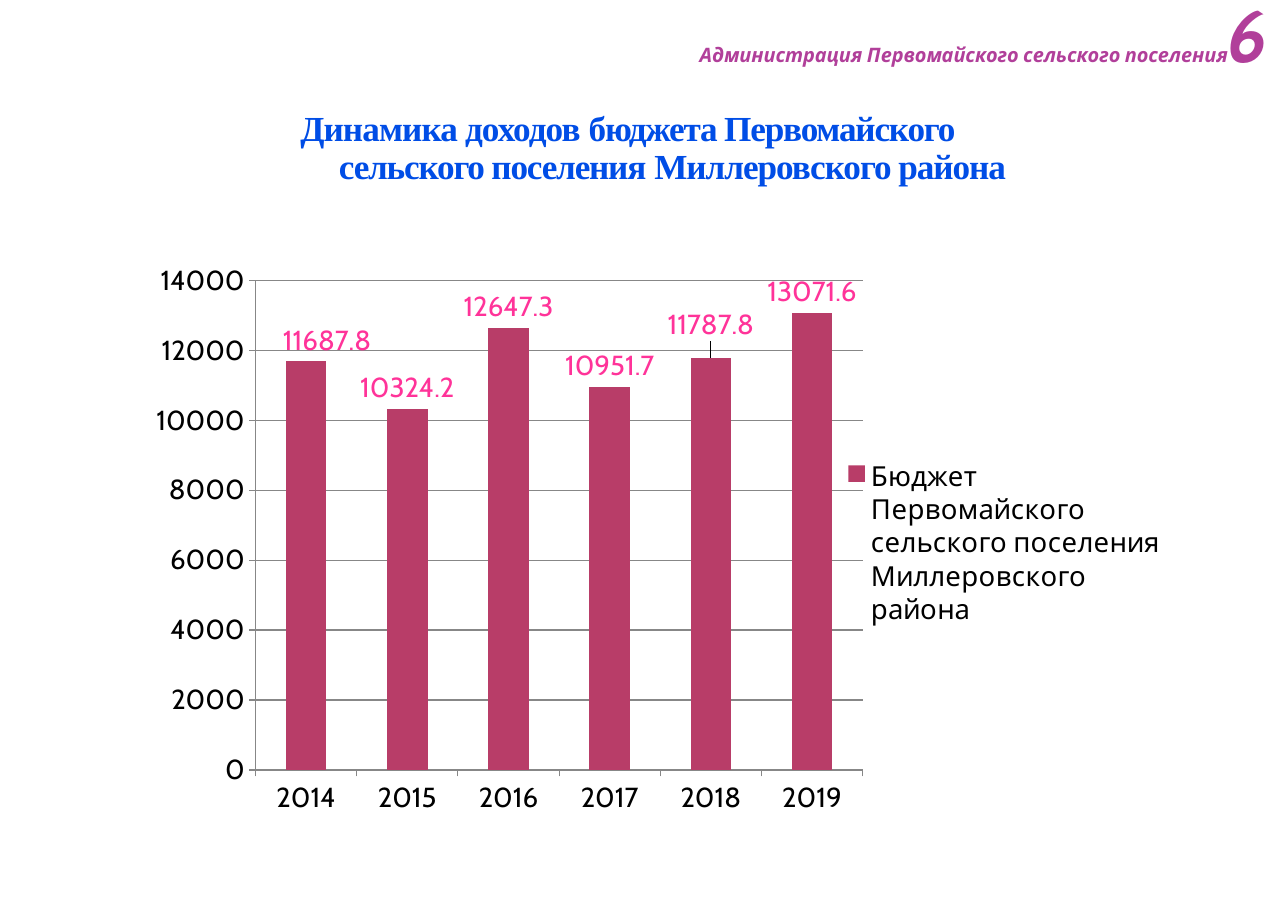
from dataclasses import dataclass

from lxml.etree import SubElement
from pptx import Presentation
from pptx.chart.data import CategoryChartData
from pptx.dml.color import RGBColor
from pptx.enum.chart import XL_CHART_TYPE, XL_LABEL_POSITION, XL_LEGEND_POSITION, XL_TICK_MARK
from pptx.enum.text import MSO_ANCHOR, MSO_AUTO_SIZE, PP_ALIGN
from pptx.oxml.ns import qn
from pptx.util import Inches, Pt


@dataclass(frozen=True)
class Theme:
    title: RGBColor = RGBColor(0x00, 0x4D, 0xE6)
    header: RGBColor = RGBColor(0xB1, 0x3F, 0x9A)
    bar: RGBColor = RGBColor(0xB8, 0x3D, 0x68)
    value: RGBColor = RGBColor(0xFF, 0x33, 0x99)
    text: RGBColor = RGBColor(0x00, 0x00, 0x00)
    rule: RGBColor = RGBColor(0x87, 0x87, 0x87)
    title_font: str = "Times New Roman"
    body_font: str = "Cabin"
    title_size: int = 23
    header_size: int = 13
    number_size: int = 48
    chart_size: int = 18


THEME = Theme()
WIDTH, HEIGHT = Inches(11.69), Inches(8.26)

# Left, top, width and height in percent of the slide
TITLE_AREA = (17.96, 12.11, 61.42, 8.47)
CHART_AREA = (10.09, 26.88, 81.27, 65.62)
HEADER_AREA = (50.73, 1.57, 47.73, 6.9)

BUDGET = {"2014": 11687.8, "2015": 10324.2, "2016": 12647.3,
          "2017": 10951.7, "2018": 11787.8, "2019": 13071.6}
SERIES_NAME = "Бюджет Первомайского сельского поселения Миллеровского района"
# Shifts of single value labels, in shares of the chart
LABEL_SHIFTS = {0: (0.02, 0), 4: (0, -0.02)}


def area(shares):
    """Turn percentages into left, top, width and height."""
    return [int(side * share / 100)
            for side, share in zip((WIDTH, HEIGHT, WIDTH, HEIGHT), shares)]


def place(shape, shares):
    shape.left, shape.top, shape.width, shape.height = area(shares)


def prepare_frame(frame, anchor, auto_size):
    frame.word_wrap = True
    frame.auto_size = auto_size
    frame.vertical_anchor = anchor
    frame.margin_left = frame.margin_top = frame.margin_right = frame.margin_bottom = 0


def add_span(para, text, font, size, color, italic=False, spacing=None):
    span = para.add_run()
    span.text = text
    span.font.name, span.font.size = font, Pt(size)
    span.font.bold, span.font.italic = True, italic
    span.font.color.rgb = color
    if spacing is not None:
        span._r.get_or_add_rPr().set("spc", str(round(spacing * 100)))


def add_title(page):
    box = page.shapes.title
    place(box, TITLE_AREA)
    prepare_frame(box.text_frame, MSO_ANCHOR.TOP, MSO_AUTO_SIZE.SHAPE_TO_FIT_TEXT)
    para = box.text_frame.paragraphs[0]
    para.alignment = PP_ALIGN.CENTER
    para.line_spacing = Pt(25)
    properties = para._p.get_or_add_pPr()
    properties.set("marL", str(Inches(0.83)))
    properties.set("indent", str(Inches(-0.82)))
    for text, spacing in (("Динамика доходов ", -0.6),
                          ("бюджета Первомайского сельского поселения ", -0.8),
                          ("Миллеровского района", -0.7)):
        add_span(para, text, THEME.title_font, THEME.title_size, THEME.title, spacing=spacing)


def add_header(page):
    box = page.shapes.add_textbox(*area(HEADER_AREA))
    prepare_frame(box.text_frame, MSO_ANCHOR.BOTTOM, MSO_AUTO_SIZE.NONE)
    para = box.text_frame.paragraphs[0]
    para.alignment = PP_ALIGN.RIGHT
    for text, size in (("Администрация Первомайского сельского поселения", THEME.header_size),
                       ("6", THEME.number_size)):
        add_span(para, text, THEME.body_font, size, THEME.header, italic=True)


def set_layout(parent, position, **values):
    """Give a chart part a manual layout, as child number `position`."""
    for layout in parent.findall(qn("c:layout")):
        parent.remove(layout)
    layout = SubElement(parent, qn("c:layout"))
    parent.insert(position, layout)
    manual = SubElement(layout, qn("c:manualLayout"))
    for name, value in values.items():
        SubElement(manual, qn(f"c:{name}")).set("val", str(value))


def style_font(font, color):
    font.name, font.size = THEME.body_font, Pt(THEME.chart_size)
    font.bold = False
    font.color.rgb = color


def style_line(line):
    line.color.rgb = THEME.rule
    line.width = Pt(0.75)


def style_axes(chart):
    for axis in (chart.category_axis, chart.value_axis):
        axis.major_tick_mark = XL_TICK_MARK.OUTSIDE
        axis.minor_tick_mark = XL_TICK_MARK.NONE
        style_line(axis.format.line)
    values = chart.value_axis
    values.minimum_scale, values.maximum_scale, values.major_unit = 0, 14000, 2000
    values.has_major_gridlines = True
    style_line(values.major_gridlines.format.line)


def style_labels(series):
    labels = series.data_labels
    labels.show_value = True
    labels.position = XL_LABEL_POSITION.OUTSIDE_END
    style_font(labels.font, THEME.value)
    for index, (right, down) in LABEL_SHIFTS.items():
        label = series.points[index].data_label
        label.position = XL_LABEL_POSITION.OUTSIDE_END
        style_font(label.font, THEME.value)
        element = series._element.xpath(f"c:dLbls/c:dLbl[c:idx/@val='{index}']")[0]
        set_layout(element, 1, x=right, y=down)


def add_budget_chart(page):
    data = CategoryChartData()
    data.categories = list(BUDGET)
    data.add_series(SERIES_NAME, list(BUDGET.values()))
    chart = page.shapes.add_chart(
        XL_CHART_TYPE.COLUMN_CLUSTERED, *area(CHART_AREA), data).chart
    chart.has_title = False
    style_font(chart.font, THEME.text)
    style_axes(chart)

    # Columns and their values
    plot = chart.plots[0]
    plot.gap_width = 150
    plot.vary_by_categories = False
    series = plot.series[0]
    series.format.fill.solid()
    series.format.fill.fore_color.rgb = THEME.bar
    style_labels(series)

    # Legend and plot positions
    chart.has_legend = True
    chart.legend.position = XL_LEGEND_POSITION.RIGHT
    chart.legend.include_in_layout = False
    style_font(chart.legend.font, THEME.text)
    legend = chart.element.xpath("c:chart/c:legend")[0]
    set_layout(legend, 1, xMode="edge", yMode="edge", x=0.68, y=0.35, w=0.31, h=0.3)
    plot_area = chart.element.xpath("c:chart/c:plotArea")[0]
    set_layout(plot_area, 0, layoutTarget="inner", xMode="edge", yMode="edge",
               x=0.12, y=0.06, w=0.58, h=0.82)


def main():
    deck = Presentation()
    deck.slide_width, deck.slide_height = WIDTH, HEIGHT
    page = deck.slides.add_slide(deck.slide_layouts[5])
    add_title(page)
    add_budget_chart(page)
    add_header(page)
    deck.save("out.pptx")


if __name__ == "__main__":
    main()
